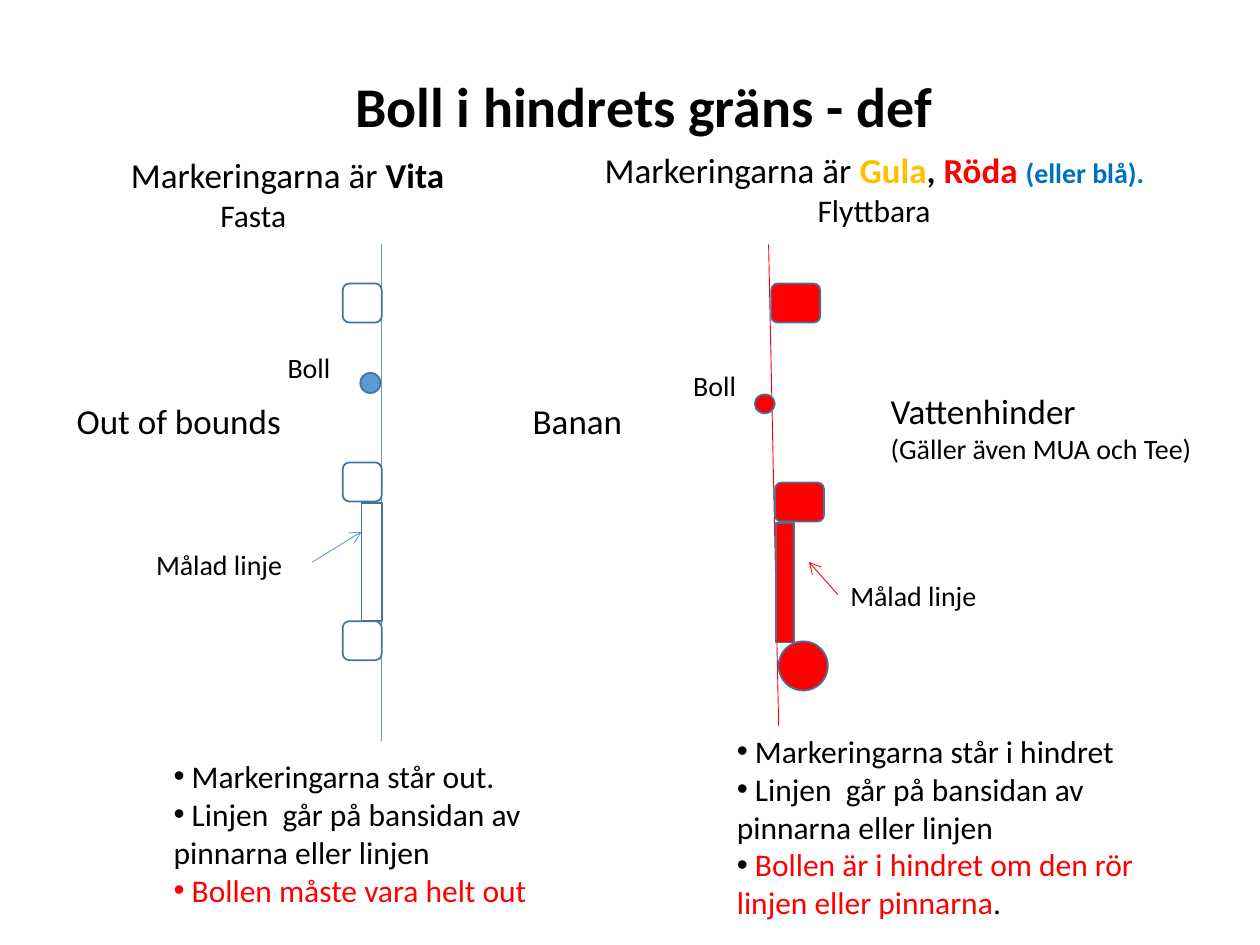
from lxml.etree import SubElement
from pptx import Presentation
from pptx.dml.color import RGBColor
from pptx.enum.shapes import MSO_CONNECTOR, MSO_SHAPE as SHAPE
from pptx.enum.text import MSO_AUTO_SIZE, PP_ALIGN
from pptx.oxml.ns import qn
from pptx.util import Inches, Pt

BLACK = RGBColor(0x00, 0x00, 0x00)
WHITE = RGBColor(0xFF, 0xFF, 0xFF)
RED = RGBColor(0xFF, 0x00, 0x00)
YELLOW = RGBColor(0xFF, 0xC0, 0x00)
BLUE = RGBColor(0x00, 0x70, 0xC0)
LIGHT_BLUE = RGBColor(0x5B, 0x9B, 0xD5)
OUTLINE = RGBColor(0x43, 0x73, 0x9E)
FONT = "Calibri"

# Each paragraph is a list of runs: (text, size, colour, bold)
TITLE = [[("Boll i hindrets gräns - def", 32, BLACK, True)]]
WHITE_HEADING = [
    [("Markeringarna är", 20, BLACK, False), (" Vita", 20, BLACK, True)],
    [("Fasta", 18, BLACK, False)],
]
COLOUR_HEADING = [
    [("Markeringarna är ", 20, BLACK, False), ("Gula", 20, YELLOW, True),
     (", ", 20, BLACK, True), ("Röda ", 20, RED, True),
     ("(eller blå).", 16, BLUE, True)],
    [("Flyttbara", 18, BLACK, False)],
]
WATER = [
    [("Vattenhinder", 20, BLACK, False)],
    [("(Gäller även MUA och Tee)", 16, BLACK, False)],
]
LINE_RULE = [(" Linjen  går på bansidan av pinnarna eller linjen", 18, BLACK, False)]
WHITE_RULES = [
    [(" Markeringarna står out.", 18, BLACK, False)],
    LINE_RULE,
    [(" Bollen måste vara helt out", 18, RED, False)],
]
COLOUR_RULES = [
    [(" Markeringarna står i hindret", 18, BLACK, False)],
    LINE_RULE,
    [(" ", 18, BLACK, False),
     ("Bollen är i hindret om den rör linjen eller pinnarna", 18, RED, False),
     (".", 18, BLACK, False)],
]

# (paragraphs, left, top, width, height, format)
TEXTS = [
    (TITLE, 2.72, 0.52, 4.8, 0.64, {}),
    (WHITE_HEADING, 0.94, 1.17, 3.07, 0.74, {"last_indent": 0.71}),
    (COLOUR_HEADING, 4.7, 1.13, 4.72, 0.77, {"last_indent": 1.69}),
    (WATER, 6.97, 3.04, 2.91, 0.71, {}),
    (WHITE_RULES, 1.28, 5.96, 3.5, 1.31, {"bullet": "•"}),
    (COLOUR_RULES, 5.75, 5.76, 3.54, 1.62, {"bullet": "•"}),
]

# (text, size, left, top, width, height, alignment)
LABELS = [
    ("Out of bounds", 20, 0.51, 3.12, 1.95, 0.44, PP_ALIGN.LEFT),
    ("Banan", 20, 4.13, 3.12, 1.1, 0.44, PP_ALIGN.LEFT),
    ("Målad linje", 16, 1.14, 4.3, 1.34, 0.37, PP_ALIGN.LEFT),
    ("Målad linje", 16, 6.65, 4.54, 1.5, 0.37, PP_ALIGN.LEFT),
    ("Boll", 16, 2.09, 2.73, 0.63, 0.37, PP_ALIGN.RIGHT),
    ("Boll", 16, 5.31, 2.88, 0.63, 0.37, PP_ALIGN.RIGHT),
]

# (start x, start y, end x, end y, colour)
BOUNDARIES = [
    (6.1, 1.94, 6.18, 5.76, RED),
    (3.03, 1.94, 3.03, 5.88, LIGHT_BLUE),
]
ARROWS = [
    (2.48, 4.46, 2.87, 4.22, LIGHT_BLUE),
    (6.65, 4.72, 6.42, 4.46, RED),
]

# (shape, left, top, width, height, fill)
WHITE_STAKES = [
    (SHAPE.ROUNDED_RECTANGLE, 2.72, top, 0.31, 0.31, WHITE)
    for top in (2.25, 3.67, 4.93)
]
RED_STAKES = [
    (SHAPE.ROUNDED_RECTANGLE, 6.12, 2.25, 0.39, 0.31, RED),
    (SHAPE.ROUNDED_RECTANGLE, 6.15, 3.83, 0.39, 0.31, RED),
    (SHAPE.OVAL, 6.18, 5.09, 0.39, 0.39, RED),
]
PAINTED_LINES = [
    (SHAPE.RECTANGLE, 2.87, 3.99, 0.16, 0.94, WHITE),
    (SHAPE.RECTANGLE, 6.16, 4.15, 0.14, 0.95, RED),
]
BALLS = [
    (SHAPE.OVAL, 2.86, 2.96, 0.16, 0.16, LIGHT_BLUE),
    (SHAPE.OVAL, 5.99, 3.13, 0.16, 0.15, RED),
]


def add_text(slide, paragraphs, *box, align=PP_ALIGN.LEFT, bullet=None, last_indent=0):
    """Add a text box; last_indent (inches) shifts its final paragraph."""
    tf = slide.shapes.add_textbox(*map(Inches, box)).text_frame
    tf.word_wrap = True
    tf.auto_size = MSO_AUTO_SIZE.SHAPE_TO_FIT_TEXT
    for i, runs in enumerate(paragraphs):
        p = tf.add_paragraph() if i else tf.paragraphs[0]
        p.alignment = align
        pPr = p._p.get_or_add_pPr()
        if bullet:
            SubElement(pPr, qn("a:buFont"), typeface="Arial")
            SubElement(pPr, qn("a:buChar"), char=bullet)
        if last_indent and i == len(paragraphs) - 1:
            pPr.set("marL", str(Inches(last_indent)))
            pPr.set("indent", "0")
        for text, size, colour, bold in runs:
            r = p.add_run()
            r.text = text
            r.font.name = FONT
            r.font.size = Pt(size)
            r.font.bold = bold
            r.font.color.rgb = colour


def add_marker(slide, kind, left, top, width, height, fill):
    sp = slide.shapes.add_shape(kind, *map(Inches, (left, top, width, height)))
    sp.shadow.inherit = False
    sp.fill.solid()
    sp.fill.fore_color.rgb = fill
    sp.line.color.rgb = OUTLINE
    sp.line.width = Pt(1)


def add_line(slide, x1, y1, x2, y2, colour, arrow=False):
    ends = map(Inches, (x1, y1, x2, y2))
    line = slide.shapes.add_connector(MSO_CONNECTOR.STRAIGHT, *ends)
    line.line.color.rgb = colour
    line.line.width = Pt(0.5)
    if arrow:
        SubElement(line.line._get_or_add_ln(), qn("a:tailEnd"), type="arrow")
    SubElement(line._element.spPr, qn("a:effectLst"))


def main():
    prs = Presentation()
    prs.slide_width, prs.slide_height = Inches(10), Inches(7.5)
    slide = prs.slides.add_slide(prs.slide_layouts[6])
    for boundary in BOUNDARIES:
        add_line(slide, *boundary)
    for marker in WHITE_STAKES + RED_STAKES + PAINTED_LINES + BALLS:
        add_marker(slide, *marker)
    for arrow in ARROWS:
        add_line(slide, *arrow, arrow=True)
    for *content, text_format in TEXTS:
        add_text(slide, *content, **text_format)
    for text, size, *box, align in LABELS:
        add_text(slide, [[(text, size, BLACK, False)]], *box, align=align)
    prs.save("out.pptx")


if __name__ == "__main__":
    main()
